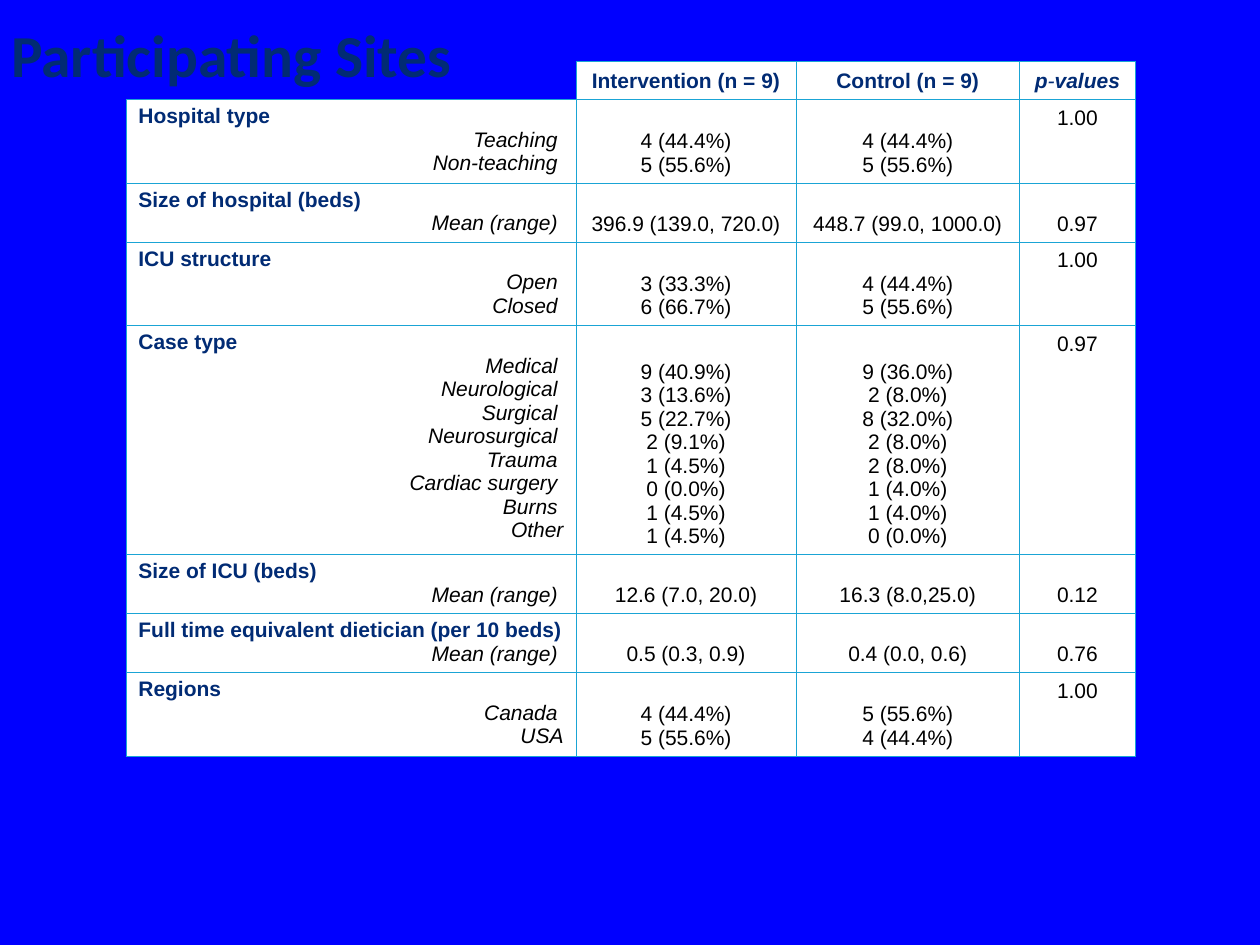
from lxml import etree
from pptx import Presentation, util as u
from pptx.dml.color import RGBColor
from pptx.enum import text
from pptx.oxml import ns

COLORS = {"back": "0000FF", "navy": "012B74", "ink": "000000",
          "cell": "FFFFFF", "border": "1AA4D5"}
TITLE = "Participating Sites"
HEADERS = ["Intervention (n = 9)", "Control (n = 9)"]
# Heading, row labels, intervention values, control values, p-value
GROUPS = [
    ("Hospital type", ["Teaching ", "Non-teaching "],
     ["4 (44.4%)", "5 (55.6%)"], ["4 (44.4%)", "5 (55.6%)"], "1.00"),
    ("Size of hospital (beds)", ["Mean (range) "],
     ["396.9 (139.0, 720.0)"], ["448.7 (99.0, 1000.0)"], "0.97"),
    ("ICU structure", ["Open ", "Closed "],
     ["3 (33.3%)", "6 (66.7%)"], ["4 (44.4%)", "5 (55.6%)"], "1.00"),
    ("Case type",
     ["Medical ", "Neurological ", "Surgical ", "Neurosurgical ", "Trauma ",
      "Cardiac surgery ", "Burns ", "Other"],
     ["9 (40.9%)", "3 (13.6%)", "5 (22.7%)", "2 (9.1%)", "1 (4.5%)",
      "0 (0.0%)", "1 (4.5%)", "1 (4.5%)"],
     ["9 (36.0%)", "2 (8.0%)", "8 (32.0%)", "2 (8.0%)", "2 (8.0%)",
      "1 (4.0%)", "1 (4.0%)", "0 (0.0%)"], "0.97"),
    ("Size of ICU (beds)", ["Mean (range) "],
     ["12.6 (7.0, 20.0)"], ["16.3 (8.0,25.0)"], "0.12"),
    ("Full time equivalent dietician (per 10 beds)", ["Mean (range) "],
     ["0.5 (0.3, 0.9)"], ["0.4 (0.0, 0.6)"], "0.76"),
    ("Regions", ["Canada ", "USA"],
     ["4 (44.4%)", "5 (55.6%)"], ["5 (55.6%)", "4 (44.4%)"], "1.00"),
]
COLUMNS = [9.07, 4.44, 4.5, 2.34]
HEADER_HEIGHT, LINE_HEIGHT, ROW_PADDING = 0.71, 0.49, 0.21
LEFT, CENTER, RIGHT = (text.PP_ALIGN.LEFT, text.PP_ALIGN.CENTER,
                       text.PP_ALIGN.RIGHT)
TOP, MIDDLE, BOTTOM = (text.MSO_ANCHOR.TOP, text.MSO_ANCHOR.MIDDLE,
                       text.MSO_ANCHOR.BOTTOM)


def add_span(para, words, size=12, font="Arial", color="ink", bold=False, italic=False):
    span = para.add_run()
    span.text = words
    span.font.size, span.font.name = u.Pt(size), font
    span.font.bold, span.font.italic = bold, italic
    span.font.color.rgb = RGBColor.from_string(COLORS[color])


def add_lines(cell, lines, align=CENTER, **style):
    """Write one paragraph per line, starting in the cell's unused first one."""
    for line in lines:
        first = cell.text_frame.paragraphs[0]
        para = cell.text_frame.add_paragraph() if first.runs else first
        para.alignment = align
        add_span(para, line, **style)


def set_borders(cell, sides):
    """Draw the named sides (L, R, T, B) and hide the others."""
    properties = cell._tc.get_or_add_tcPr()
    for side in "LRTB":
        line = etree.SubElement(properties, ns.qn("a:ln" + side), w=str(u.Pt(0.5)))
        if side in sides:
            fill = etree.SubElement(line, ns.qn("a:solidFill"))
            etree.SubElement(fill, ns.qn("a:srgbClr"), val=COLORS["border"])
        else:
            etree.SubElement(line, ns.qn("a:noFill"))


def format_cell(cell, anchor=MIDDLE, top=0.1, bottom=0.1):
    set_borders(cell, "LRTB")
    cell.fill.solid()
    cell.fill.fore_color.rgb = RGBColor.from_string(COLORS["cell"])
    cell.vertical_anchor = anchor
    cell.margin_left = cell.margin_right = u.Cm(0.25)
    cell.margin_top, cell.margin_bottom = u.Cm(top), u.Cm(bottom)


def fill_header(table):
    corner = table.cell(0, 0)
    set_borders(corner, "RB")
    corner.fill.background()
    etree.SubElement(corner.text_frame.paragraphs[0]._p,
                     ns.qn("a:endParaRPr"), sz="1200")
    for column, words in enumerate(HEADERS, 1):
        add_lines(table.cell(0, column), [words], color="navy", bold=True)
        format_cell(table.cell(0, column))
    cell = table.cell(0, 3)
    format_cell(cell)
    para = cell.text_frame.paragraphs[0]
    para.alignment = CENTER
    for words, bold in [("p", True), ("-", False), ("values", True)]:
        add_span(para, words, color="navy", bold=bold, italic=True)


def fill_group(table, row, group):
    heading, labels, intervention, control, p_value = group
    cell = table.cell(row, 0)
    add_lines(cell, [heading], align=LEFT, color="navy", bold=True)
    add_lines(cell, labels, align=RIGHT, italic=True)
    format_cell(cell, TOP)
    for column, values in enumerate([intervention, control, [p_value]], 1):
        cell = table.cell(row, column)
        add_lines(cell, values)
        # A single p-value for several labels stands beside the heading
        if len(values) < len(labels):
            format_cell(cell, TOP, top=0.13)
        else:
            format_cell(cell, BOTTOM, top=0, bottom=0.13)


def add_title(page):
    title = page.shapes.title
    title.left, title.top = u.Cm(-0.03), u.Cm(0.46)
    title.width, title.height = u.Cm(9.78), u.Cm(1.9)
    frame = title.text_frame
    frame.auto_size = text.MSO_AUTO_SIZE.NONE
    frame.vertical_anchor = TOP
    para = frame.paragraphs[0]
    para.alignment, para.line_spacing = LEFT, 0.85
    add_span(para, TITLE, size=34, font="Calibri", color="navy", bold=True)


def add_sites_table(page):
    heights = [HEADER_HEIGHT] + [LINE_HEIGHT * (len(group[1]) + 1) + ROW_PADDING
                                 for group in GROUPS]
    table = page.shapes.add_table(
        len(heights), len(COLUMNS), u.Cm(2.54), u.Cm(1.24),
        u.Cm(sum(COLUMNS)), u.Cm(sum(heights))).table
    table.first_row = table.horz_banding = False
    for column, width in zip(table.columns, COLUMNS):
        column.width = u.Cm(width)
    for row, height in zip(table.rows, heights):
        row.height = u.Cm(height)
    fill_header(table)
    for row, group in enumerate(GROUPS, 1):
        fill_group(table, row, group)


def main():
    deck = Presentation()
    deck.slide_width, deck.slide_height = u.Cm(25.4), u.Cm(19.05)
    page = deck.slides.add_slide(deck.slide_layouts[5])
    page.background.fill.solid()
    page.background.fill.fore_color.rgb = RGBColor.from_string(COLORS["back"])
    add_title(page)
    add_sites_table(page)
    deck.save("out.pptx")


if __name__ == "__main__":
    main()
